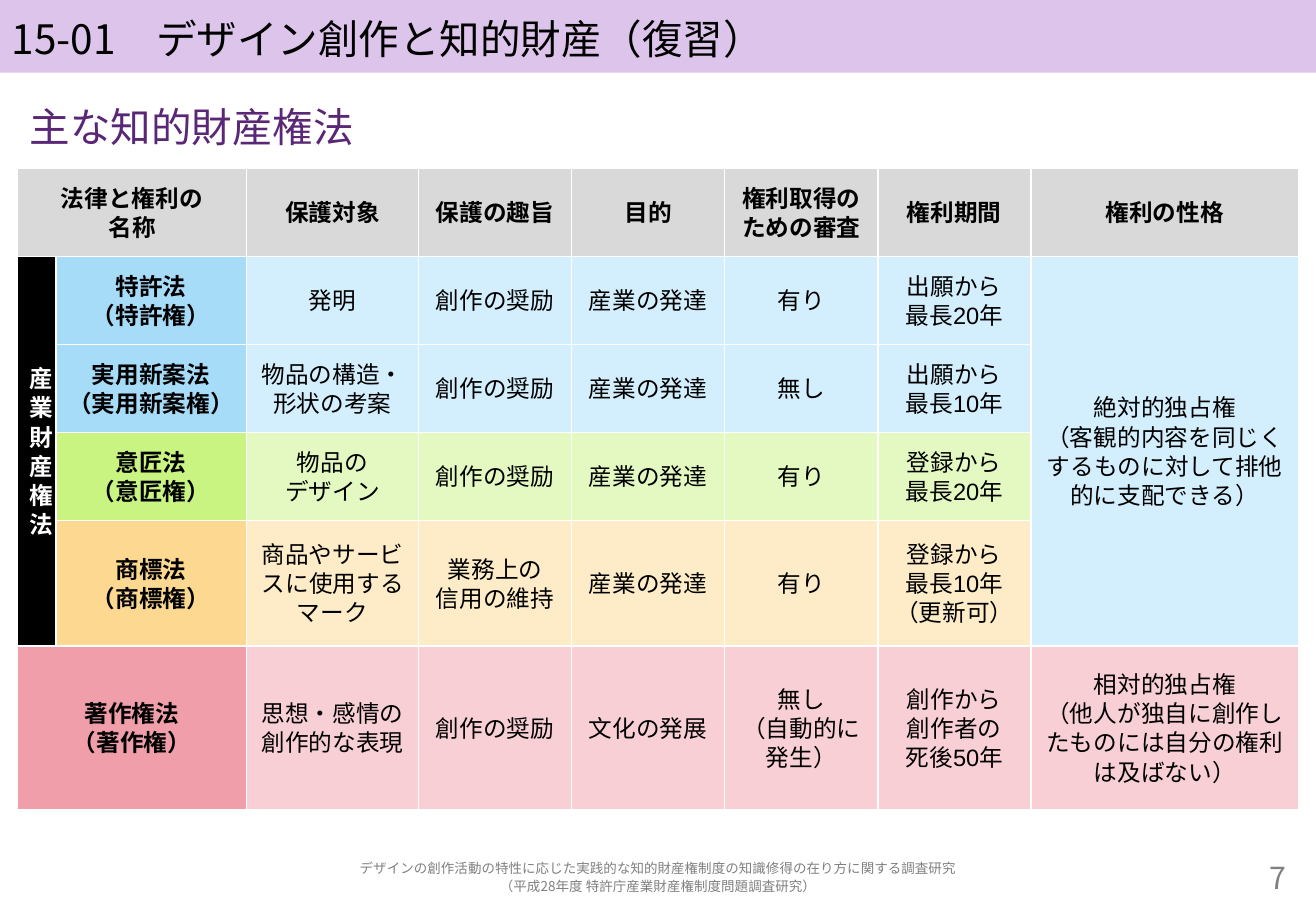
from lxml import etree
from pptx import Presentation
from pptx.dml.color import RGBColor
from pptx.enum.text import MSO_ANCHOR, PP_ALIGN
from pptx.oxml.ns import qn
from pptx.util import Cm, Pt

TOP, MIDDLE = MSO_ANCHOR.TOP, MSO_ANCHOR.MIDDLE
LEFT, CENTER, RIGHT = PP_ALIGN.LEFT, PP_ALIGN.CENTER, PP_ALIGN.RIGHT

BLACK = RGBColor(0x00, 0x00, 0x00)
WHITE = RGBColor(0xFF, 0xFF, 0xFF)
GRAY = RGBColor(0x80, 0x80, 0x80)
HEADER_GRAY = RGBColor(0xD9, 0xD9, 0xD9)
LAVENDER = RGBColor(0xDD, 0xC4, 0xEB)
PURPLE = RGBColor(0x59, 0x27, 0x75)
BLUE, PALE_BLUE = RGBColor(0xA7, 0xDC, 0xF9), RGBColor(0xD3, 0xEE, 0xFC)
GREEN, PALE_GREEN = RGBColor(0xC9, 0xF4, 0x82), RGBColor(0xE4, 0xF9, 0xC1)
ORANGE, PALE_ORANGE = RGBColor(0xFC, 0xD8, 0x90), RGBColor(0xFD, 0xEC, 0xC7)
PINK, PALE_PINK = RGBColor(0xF0, 0x9F, 0xAA), RGBColor(0xF8, 0xCF, 0xD5)

COLUMN_WIDTHS = [0.8, 3.98, 3.6, 3.2, 3.2, 3.2, 3.2, 5.6]
ROW_HEIGHTS = [1.84, 1.84, 1.84, 1.84, 2.63, 3.42]
ROW_FILLS = [
    (HEADER_GRAY, HEADER_GRAY),
    (BLUE, PALE_BLUE),
    (BLUE, PALE_BLUE),
    (GREEN, PALE_GREEN),
    (ORANGE, PALE_ORANGE),
    (PINK, PALE_PINK),
]
LAWS = [
    ["法律と権利の\n名称", "", "保護対象", "保護の趣旨", "目的",
     "権利取得のための審査", "権利期間", "権利の性格"],
    ["産業財産権法", "特許法\n（特許権）", "発明", "創作の奨励", "産業の発達",
     "有り", "出願から\n最長20年",
     "絶対的独占権\n（客観的内容を同じくするものに対して排他的に支配できる）"],
    ["", "実用新案法\n（実用新案権）", "物品の構造・形状の考案", "創作の奨励",
     "産業の発達", "無し", "出願から\n最長10年", ""],
    ["", "意匠法\n（意匠権）", "物品の\nデザイン", "創作の奨励", "産業の発達",
     "有り", "登録から\n最長20年", ""],
    ["", "商標法\n（商標権）", "商品やサービスに使用するマーク",
     "業務上の\n信用の維持", "産業の発達", "有り",
     "登録から\n最長10年\n（更新可）", ""],
    ["著作権法\n（著作権）", "", "思想・感情の創作的な表現", "創作の奨励",
     "文化の発展", "無し\n（自動的に発生）", "創作から\n創作者の\n死後50年",
     "相対的独占権\n（他人が独自に創作したものには自分の権利は及ばない）"],
]
MERGES = [((0, 0), (0, 1)), ((1, 0), (4, 0)), ((1, 7), (4, 7)), ((5, 0), (5, 1))]


class SlideBuilder:
    text_font = "Noto Sans CJK JP"
    table_font = "Arial"
    line_spacing = 1.1

    def __init__(self, slide):
        self.slide = slide

    def format_text(self, text_frame, size, color, font, align, bold=False):
        for paragraph in text_frame.paragraphs:
            paragraph.alignment = align
            paragraph.line_spacing = self.line_spacing
            for run in paragraph.runs:
                run.font.size = Pt(size)
                run.font.bold = bold
                run.font.name = font
                run.font.color.rgb = color
                east_asian = etree.SubElement(run.font._element, qn("a:ea"))
                east_asian.set("typeface", font)

    def text(self, text, left, top, width, height, size, color, align=LEFT,
             anchor=MIDDLE, fill=None):
        shape = self.slide.shapes.add_textbox(Cm(left), Cm(top), Cm(width), Cm(height))
        if fill is not None:
            shape.fill.solid()
            shape.fill.fore_color.rgb = fill
        text_frame = shape.text_frame
        text_frame.word_wrap = True
        text_frame.vertical_anchor = anchor
        text_frame.margin_top = text_frame.margin_bottom = 0
        text_frame.text = text
        self.format_text(text_frame, size, color, self.text_font, align)

    def border(self, cell, color):
        properties = cell._tc.get_or_add_tcPr()
        for side in ("a:lnL", "a:lnR", "a:lnT", "a:lnB"):
            line = etree.SubElement(properties, qn(side), w=str(Pt(1)))
            fill = etree.SubElement(line, qn("a:solidFill"))
            etree.SubElement(fill, qn("a:srgbClr"), val=str(color))

    def cell(self, cell, text, fill, color, bold):
        self.border(cell, WHITE)
        cell.fill.solid()
        cell.fill.fore_color.rgb = fill
        cell.vertical_anchor = MIDDLE
        cell.text_frame.text = text
        self.format_text(cell.text_frame, 14, color, self.table_font, CENTER, bold)

    def law_table(self, left, top):
        frame = self.slide.shapes.add_table(
            len(ROW_HEIGHTS), len(COLUMN_WIDTHS), Cm(left), Cm(top),
            Cm(sum(COLUMN_WIDTHS)), Cm(sum(ROW_HEIGHTS)))
        table = frame.table
        for column, width in zip(table.columns, COLUMN_WIDTHS):
            column.width = Cm(width)
        for row, height in zip(table.rows, ROW_HEIGHTS):
            row.height = Cm(height)
        for row_index, (texts, fills) in enumerate(zip(LAWS, ROW_FILLS)):
            strong, pale = fills
            for column_index, text in enumerate(texts):
                is_category = column_index == 0 and 1 <= row_index <= 4
                is_name = column_index < 2
                fill = BLACK if is_category else strong if is_name else pale
                if column_index == 7 and 1 <= row_index <= 4:
                    fill = PALE_BLUE
                self.cell(table.cell(row_index, column_index), text, fill,
                          WHITE if is_category else BLACK, is_name or row_index == 0)
        for first, last in MERGES:
            table.cell(*first).merge(table.cell(*last))
        table.cell(1, 0)._tc.get_or_add_tcPr().set("vert", "eaVert")


def main():
    presentation = Presentation()
    presentation.slide_width = Cm(27.51)
    presentation.slide_height = Cm(19.05)
    builder = SlideBuilder(presentation.slides.add_slide(presentation.slide_layouts[6]))
    builder.text("15-01　デザイン創作と知的財産（復習）", 0, 0, 27.51, 1.52, 24, BLACK,
                 fill=LAVENDER)
    builder.law_table(0.37, 3.52)
    builder.text("主な知的財産権法", 0.37, 2.04, 26.78, 1.2, 24, PURPLE, anchor=TOP)
    builder.text("7", 23.75, 17.9, 3.4, 0.8, 18, GRAY, RIGHT)
    builder.text("デザインの創作活動の特性に応じた実践的な知的財産権制度の知識修得の在り方に関する調査研究\n"
                 "（平成28年度 特許庁産業財産権制度問題調査研究）",
                 0.37, 17.93, 26.78, 0.8, 8, GRAY, CENTER)
    presentation.save("out.pptx")


if __name__ == "__main__":
    main()
